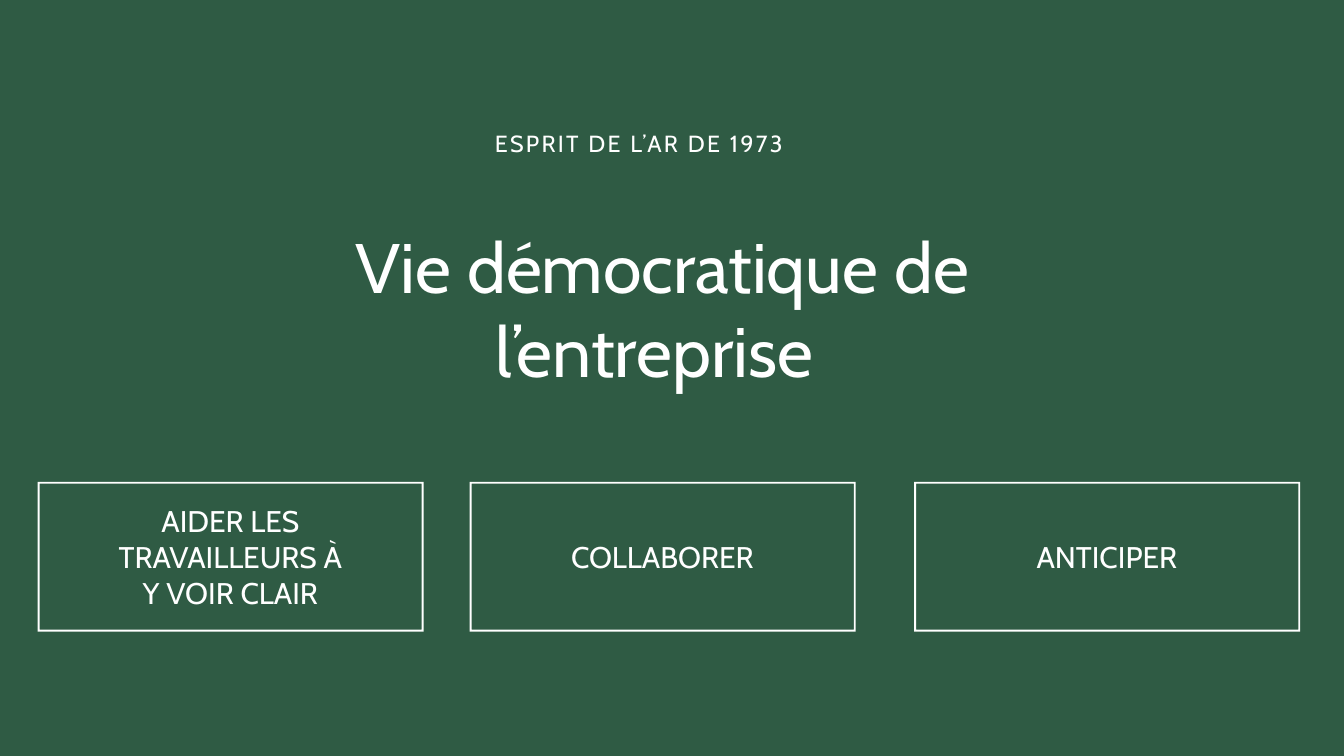
from pptx import Presentation
from pptx.dml.color import RGBColor
from pptx.enum import text
from pptx.util import Pt

HUES = {"green": "2F5B44", "white": "FFFFFF"}

deck = Presentation()
deck.slide_width, deck.slide_height = Pt(1440), Pt(810)
slide = deck.slides.add_slide(deck.slide_layouts[6])
back = slide.background.fill
back.solid()
back.fore_color.rgb = RGBColor.from_string(HUES["green"])


def write(words, left, top, width, height, size, lead, track=0):
    box = slide.shapes.add_textbox(Pt(left), Pt(top), Pt(width), Pt(height))
    frame = box.text_frame
    frame.word_wrap = True
    frame.margin_left = frame.margin_right = 0
    frame.margin_top = frame.margin_bottom = 0
    frame.vertical_anchor = text.MSO_ANCHOR.MIDDLE
    para = frame.paragraphs[0]
    para.alignment = text.PP_ALIGN.CENTER
    para.line_spacing = Pt(lead)
    run = para.add_run()
    run.text = words
    run.font.name = "Cabin"
    run.font.size = Pt(size)
    run.font.color.rgb = RGBColor.from_string(HUES["white"])
    if track:
        run.font._element.set("spc", str(track))


def corners(left, top, right, low):
    return [(Pt(x), Pt(y)) for x, y in
            [(left, top), (left, low), (right, low), (right, top)]]


write("ESPRIT DE L’AR DE 1973", 318.2, 136.1, 733, 32, 25, 32.5, 250)
write("Vie démocratique de l’entreprise ", 233.3, 239, 952.6, 180.7, 75, 90)

CARDS = [(40.4, "AIDER LES TRAVAILLEURS À Y VOIR CLAIR"),
         (503.3, "COLLABORER"),
         (979.5, "ANTICIPER")]
TOP, WIDE, HIGH, EDGE = 516.2, 413.5, 160.5, 2

for left, label in CARDS:
    right, low = left + WIDE, TOP + HIGH
    outer = corners(left, TOP, right, low)
    inner = corners(left + EDGE, TOP + EDGE, right - EDGE, low - EDGE)[::-1]
    pen = slide.shapes.build_freeform(*outer[0], scale=1.0)
    pen.add_line_segments(outer[1:], close=True)
    pen.move_to(*inner[0])
    pen.add_line_segments(inner[1:], close=True)
    border = pen.convert_to_shape()
    border.shadow.inherit = False
    border.fill.solid()
    border.fill.fore_color.rgb = RGBColor.from_string(HUES["white"])
    border.line.fill.background()
    write(label, left + 74.4, 539.3, 264.2, 114.5, 32, 38.4)

deck.save("out.pptx")
